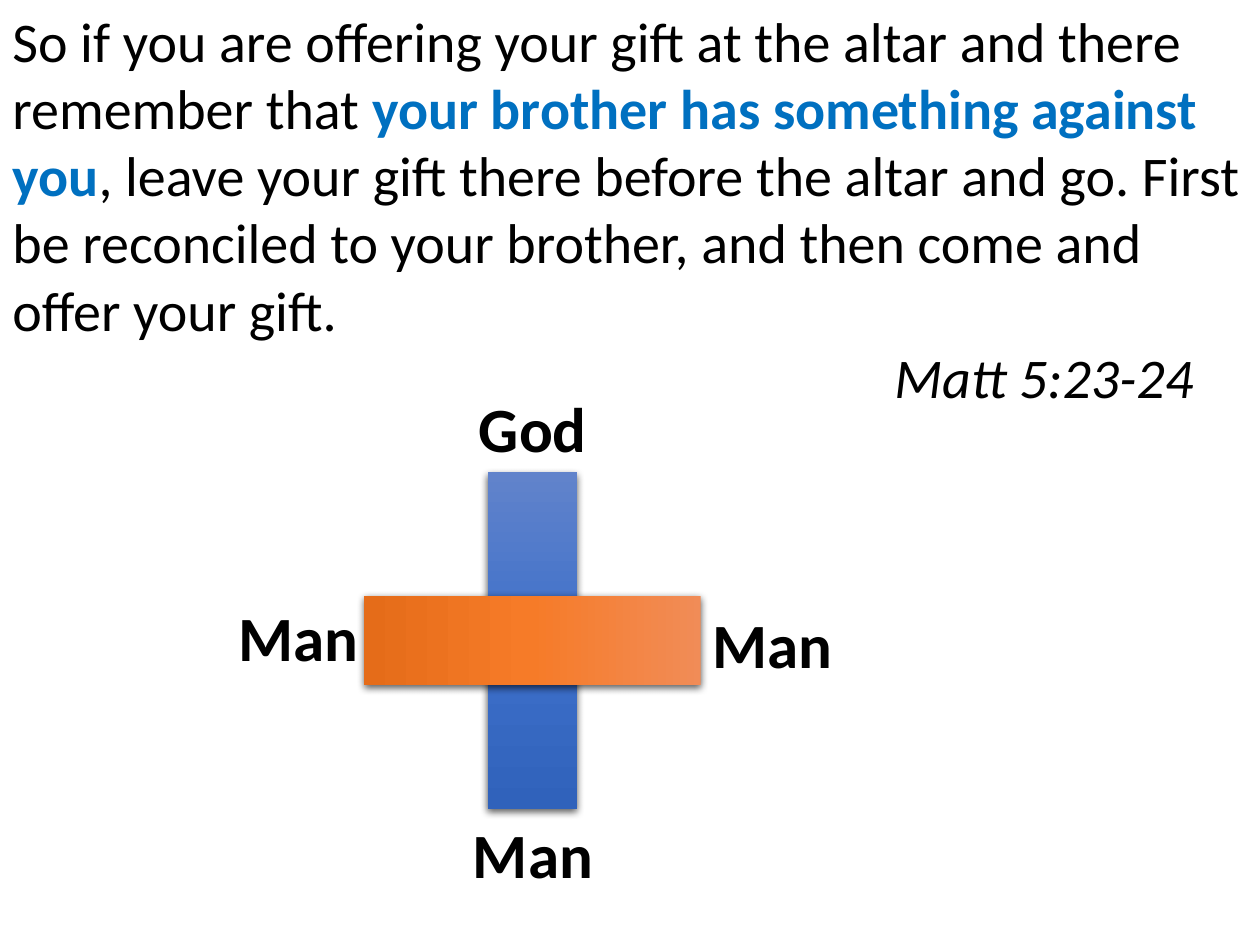
from lxml.etree import fromstring
from pptx import Presentation
from pptx.dml.color import RGBColor
from pptx.enum.shapes import MSO_SHAPE
from pptx.enum.text import PP_ALIGN
from pptx.util import Inches, Pt

COLORS = {"text": "000000", "emphasis": "0070C0", "shadow": "000000"}
GRADIENTS = {
    "vertical": ["6183CB", "3E70CA", "3062BB"],
    "horizontal": ["F18C57", "F67B28", "E56C19"],
}
NAMESPACE = 'xmlns:a="http://schemas.openxmlformats.org/drawingml/2006/main"'
VERSE = [
    ("So if you are offering your gift at the altar and there remember that ", {}),
    ("your brother has something against you", {"bold": True, "color": "emphasis"}),
    (", leave your gift there before the altar and go. First be reconciled to "
     "your brother, and then come and offer your gift.", {}),
]
BAR = (3.87, 3.75, 0.71, 2.67)
LABEL_SIZE = (1.86, 0.71)
LABELS = [("God", 3.3, 3.04), ("Man", 3.3, 6.42), ("Man", 1.44, 4.7), ("Man", 5.2, 4.76)]


def add_run(paragraph, text, size, color="text", **formats):
    run = paragraph.add_run()
    run.text = text
    run.font.color.rgb = RGBColor.from_string(COLORS[color])
    for name, value in {"name": "Calibri", "size": Pt(size), **formats}.items():
        setattr(run.font, name, value)


def add_text_frame(slide, *box):
    text_frame = slide.shapes.add_textbox(*map(Inches, box)).text_frame
    text_frame.word_wrap = True
    return text_frame


def add_passage(slide):
    text_frame = add_text_frame(slide, 0, 0, 10, 3.33)
    for text, formats in VERSE:
        add_run(text_frame.paragraphs[0], text, 32, **formats)
    reference = text_frame.add_paragraph()
    reference._p.get_or_add_pPr().set("marL", str(Inches(7)))
    add_run(reference, "Matt 5:23-24", 32, italic=True)


def add_label(slide, text, left, top):
    paragraph = add_text_frame(slide, left, top, *LABEL_SIZE).paragraphs[0]
    paragraph.alignment = PP_ALIGN.CENTER
    add_run(paragraph, text, 36, bold=True)


def add_bar(slide, gradient, rotation):
    """Add one beam of the cross, with a three-stop gradient and a soft shadow."""
    shape = slide.shapes.add_shape(MSO_SHAPE.RECTANGLE, *map(Inches, BAR))
    shape.rotation = rotation
    shape.line.fill.background()
    stops = "".join(
        f'<a:gs pos="{index * 50000}"><a:srgbClr val="{color}"/></a:gs>'
        for index, color in enumerate(GRADIENTS[gradient])
    )
    fill = (f'<a:gradFill {NAMESPACE} rotWithShape="1"><a:gsLst>{stops}</a:gsLst>'
            '<a:lin ang="5400000" scaled="0"/></a:gradFill>')
    effects = (f'<a:effectLst {NAMESPACE}><a:outerShdw blurRad="{Pt(4.5)}" '
               f'dist="{Pt(1.5)}" dir="5400000" algn="ctr" rotWithShape="0">'
               f'<a:srgbClr val="{COLORS["shadow"]}"><a:alpha val="63000"/></a:srgbClr>'
               '</a:outerShdw></a:effectLst>')
    properties = shape._element.spPr
    properties.find("{*}prstGeom").addnext(fromstring(fill))
    properties.append(fromstring(effects))


def main():
    presentation = Presentation()
    presentation.slide_width = Inches(10)
    presentation.slide_height = Inches(7.5)
    slide = presentation.slides.add_slide(presentation.slide_layouts[6])
    add_passage(slide)
    add_bar(slide, "vertical", 0)
    add_bar(slide, "horizontal", 90)
    for label in LABELS:
        add_label(slide, *label)
    presentation.save("out.pptx")


if __name__ == "__main__":
    main()
